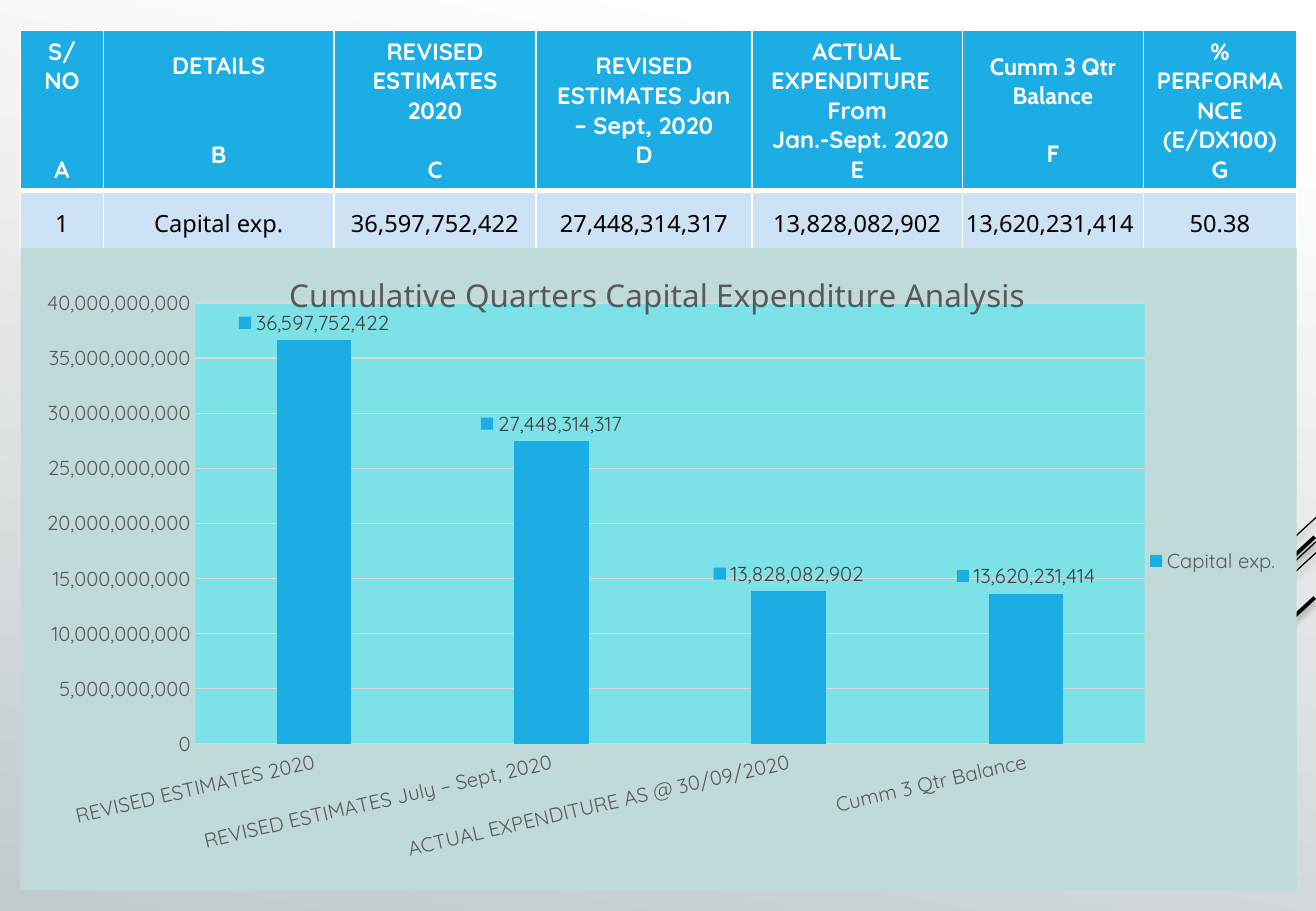
from lxml.etree import SubElement
from pptx import Presentation
from pptx.chart.data import CategoryChartData
from pptx.dml.color import RGBColor
from pptx.enum.chart import XL_CHART_TYPE, XL_LABEL_POSITION, XL_LEGEND_POSITION, XL_TICK_MARK
from pptx.enum.shapes import MSO_CONNECTOR
from pptx.enum.text import MSO_ANCHOR, PP_ALIGN
from pptx.oxml import parse_xml
from pptx.oxml.ns import nsdecls, qn
from pptx.util import Inches, Pt

W, H = 10.83, 7.5
LEFT, WIDTH = 0.17, 10.5
COLORS = {
    "white": "FFFFFF", "black": "000000", "bg_end": "C2CACE", "blue": "1CADE4",
    "row": "CDE3F5", "panel": "C0DAD9", "plot": "7DE2E7", "grid": "D9D9D9",
    "text": "595959", "label": "404040",
}
COLS = [0.68, 1.9, 1.66, 1.78, 1.73, 1.49, 1.26]
ROWS = [1.26, 0.53]
LINE = 17.5  # height of one 14 pt header line

# Header: paragraphs above the column letter, letter, lines left free between
HEADER = [
    (["S/NO"], "A", 2),
    (["DETAILS"], "B", 2),
    (["REVISED ESTIMATES 2020"], "C", 1),
    (["REVISED ESTIMATES Jan – Sept, 2020"], "D", 0),
    (["ACTUAL EXPENDITURE  ", "From", " Jan.-Sept. 2020"], "E", 0),
    (["Cumm 3 Qtr Balance"], "F", 1),
    (["% PERFORMANCE (E/DX100)"], "G", 0),
]
AMOUNTS = [36597752422, 27448314317, 13828082902, 13620231414]
VALUES = ["1", "Capital exp.", "36,597,752,422", "27,448,314,317", "13,828,082,902",
          "13,620,231,414 ", "50.38"]
CATEGORIES = ["REVISED ESTIMATES 2020", "REVISED ESTIMATES July – Sept, 2020",
              "ACTUAL EXPENDITURE AS @ 30/09/2020", "Cumm 3 Qtr Balance"]
# Corner lines: right end, left end, width
STROKES = [
    (10.83, 4.26, 9.93, 5.09, 0.75), (10.83, 4.46, 7.9, 7.17, 0.75),
    (10.83, 4.55, 8.97, 6.27, 0.75), (10.82, 4.42, 9.12, 5.99, 2.25),
    (10.82, 4.92, 9.58, 6.06, 2.25),
]


def rgb(name):
    return RGBColor.from_string(COLORS[name])


def style(font, color, **values):
    font.color.rgb = rgb(color)
    for key, value in values.items():
        setattr(font, key, value)


def solid_xml(color):
    return f'<a:solidFill><a:srgbClr val="{COLORS[color]}"/></a:solidFill>'


def add_background(s):
    fill = s.background.fill
    fill.gradient()
    fill.gradient_angle = 258
    for stop, name, position in zip(fill.gradient_stops, ("white", "bg_end"), (0.1, 1)):
        stop.color.rgb = rgb(name)
        stop.position = position


def add_strokes(s):
    for x1, y1, x2, y2, width in STROKES:
        line = s.shapes.add_connector(MSO_CONNECTOR.STRAIGHT, *map(Inches, (x1, y1, x2, y2)))
        line.line.color.rgb = rgb("black")
        line.line.width = Pt(width)
        effects = SubElement(line._element.spPr, qn("a:effectLst"))
        shadow = SubElement(effects, qn("a:outerShdw"), blurRad=str(Pt(4)), dist=str(Pt(3)),
                            dir="5400000", rotWithShape="0")
        color = SubElement(shadow, qn("a:srgbClr"), val=COLORS["black"])
        SubElement(color, qn("a:alpha"), val="35000")


def set_cell(cell, lines, fill, margins, bottom=1, gap=0, **font):
    cell.vertical_anchor = MSO_ANCHOR.MIDDLE
    for side, margin in zip(("left", "top", "right", "bottom"), margins):
        setattr(cell, f"margin_{side}", Inches(margin))
    tf = cell.text_frame
    for i, text in enumerate(lines):
        p = tf.paragraphs[0] if i == 0 else tf.add_paragraph()
        p.alignment = PP_ALIGN.CENTER
        r = p.add_run()
        r.text = text
        style(r.font, size=Pt(14), **font)
    if gap:
        p.space_before = Pt(gap * LINE)
    # Borders come before the fill in the cell properties
    tc_pr = cell._tc.get_or_add_tcPr()
    for side, width in (("L", 1), ("R", 1), ("T", 1), ("B", bottom)):
        tc_pr.append(parse_xml(f'<a:ln{side} {nsdecls("a")} w="{Pt(width)}">'
                               f'{solid_xml("white")}</a:ln{side}>'))
    cell.fill.solid()
    cell.fill.fore_color.rgb = rgb(fill)


def add_summary_table(s, x, y, w, h):
    table = s.shapes.add_table(len(ROWS), len(COLS), *map(Inches, (x, y, w, h))).table
    for col, share in zip(table.columns, COLS):
        col.width = Inches(w * share / sum(COLS))
    for row, share in zip(table.rows, ROWS):
        row.height = Inches(h * share / sum(ROWS))
    for i, ((lines, letter, gap), value) in enumerate(zip(HEADER, VALUES)):
        face = "Cabin" if letter == "F" else "Quicksand"
        set_cell(table.cell(0, i), [*lines, letter], "blue", (0.11, 0.05, 0.11, 0.05),
                 bottom=3, gap=gap, color="white", name=face, bold=True)
        set_cell(table.cell(1, i), [value], "row", (0.01, 0.01, 0.01, 0),
                 color="black", name="Noto Sans", bold=False)


def set_layout(parent, index, x, y, size=None):
    for old in parent.findall(qn("c:layout")):
        parent.remove(old)
    parts = [("xMode", "edge"), ("yMode", "edge"), ("x", x), ("y", y)]
    if size:
        parts = [("layoutTarget", "inner"), *parts, ("w", size[0]), ("h", size[1])]
    layout = parse_xml(f'<c:layout {nsdecls("c")}><c:manualLayout/></c:layout>')
    for tag, value in parts:
        SubElement(layout[0], qn(f"c:{tag}"), val=str(value))
    parent.insert(index, layout)


def area_fill(color):
    return parse_xml(f'<c:spPr {nsdecls("c", "a")}>{solid_xml(color)}'
                     '<a:ln><a:noFill/></a:ln></c:spPr>')


def add_expenditure_chart(s, x, y, w, h):
    data = CategoryChartData(number_format="#,##0")
    data.categories = CATEGORIES
    data.add_series("Capital exp.", AMOUNTS)
    chart = s.shapes.add_chart(XL_CHART_TYPE.COLUMN_CLUSTERED,
                               *map(Inches, (x, y, w, h)), data).chart
    small = {"size": Pt(12), "name": "Quicksand", "bold": False}
    style(chart.font, "black", name="Quicksand", size=Pt(10))

    # Title over the plot
    tf = chart.chart_title.text_frame
    tf.text = "Cumulative Quarters Capital Expenditure Analysis"
    style(tf.paragraphs[0].runs[0].font, "text", size=Pt(18.6), name="Noto Sans", bold=False)
    title = chart.chart_title._element
    set_layout(title, 1, 0.206, 0.025)
    title.find(qn("c:overlay")).set("val", "1")

    # Panel and plot areas
    root = chart._chartSpace
    root.find(qn("c:chart")).addnext(area_fill("panel"))
    plot_area = root.xpath("c:chart/c:plotArea")[0]
    set_layout(plot_area, 0, 0.137, 0.086, (0.744, 0.686))
    plot_area.append(area_fill("plot"))

    # Axes
    cat, val = chart.category_axis, chart.value_axis
    for axis in (cat, val):
        axis.major_tick_mark = axis.minor_tick_mark = XL_TICK_MARK.NONE
        style(axis.tick_labels.font, "text", **small)
    cat._element.find(qn("c:txPr")).find(qn("a:bodyPr")).set("rot", str(-13 * 60000))
    val.minimum_scale, val.maximum_scale, val.major_unit = 0, 40e9, 5e9
    val.tick_labels.number_format = "#,##0"
    val.tick_labels.number_format_is_linked = False
    val.format.line.fill.background()
    for line in (cat.format.line, val.major_gridlines.format.line):
        line.color.rgb = rgb("grid")
        line.width = Pt(0.75)

    # Columns and labels
    plot = chart.plots[0]
    plot.gap_width, plot.overlap, plot.vary_by_categories = 219, -27, False
    series = plot.series[0]
    series.format.fill.solid()
    series.format.fill.fore_color.rgb = rgb("blue")
    labels = series.data_labels
    for key, value in {"show_value": True, "show_legend_key": True, "number_format": "#,##0",
                       "number_format_is_linked": False,
                       "position": XL_LABEL_POSITION.OUTSIDE_END}.items():
        setattr(labels, key, value)
    style(labels.font, "label", **small)

    # Legend
    chart.has_legend = True
    chart.legend.position = XL_LEGEND_POSITION.RIGHT
    chart.legend.include_in_layout = False
    style(chart.legend.font, "text", **small)
    set_layout(chart.legend._element, 1, 0.88, 0.46)


def main():
    prs = Presentation()
    prs.slide_width, prs.slide_height = Inches(W), Inches(H)
    s = prs.slides.add_slide(prs.slide_layouts[6])
    top, table_height = 0.25, sum(ROWS)
    chart_top = top + table_height
    add_background(s)
    add_strokes(s)
    add_summary_table(s, LEFT, top, WIDTH, table_height)
    add_expenditure_chart(s, LEFT, chart_top, WIDTH, H - LEFT - chart_top)
    prs.save("out.pptx")


if __name__ == "__main__":
    main()
